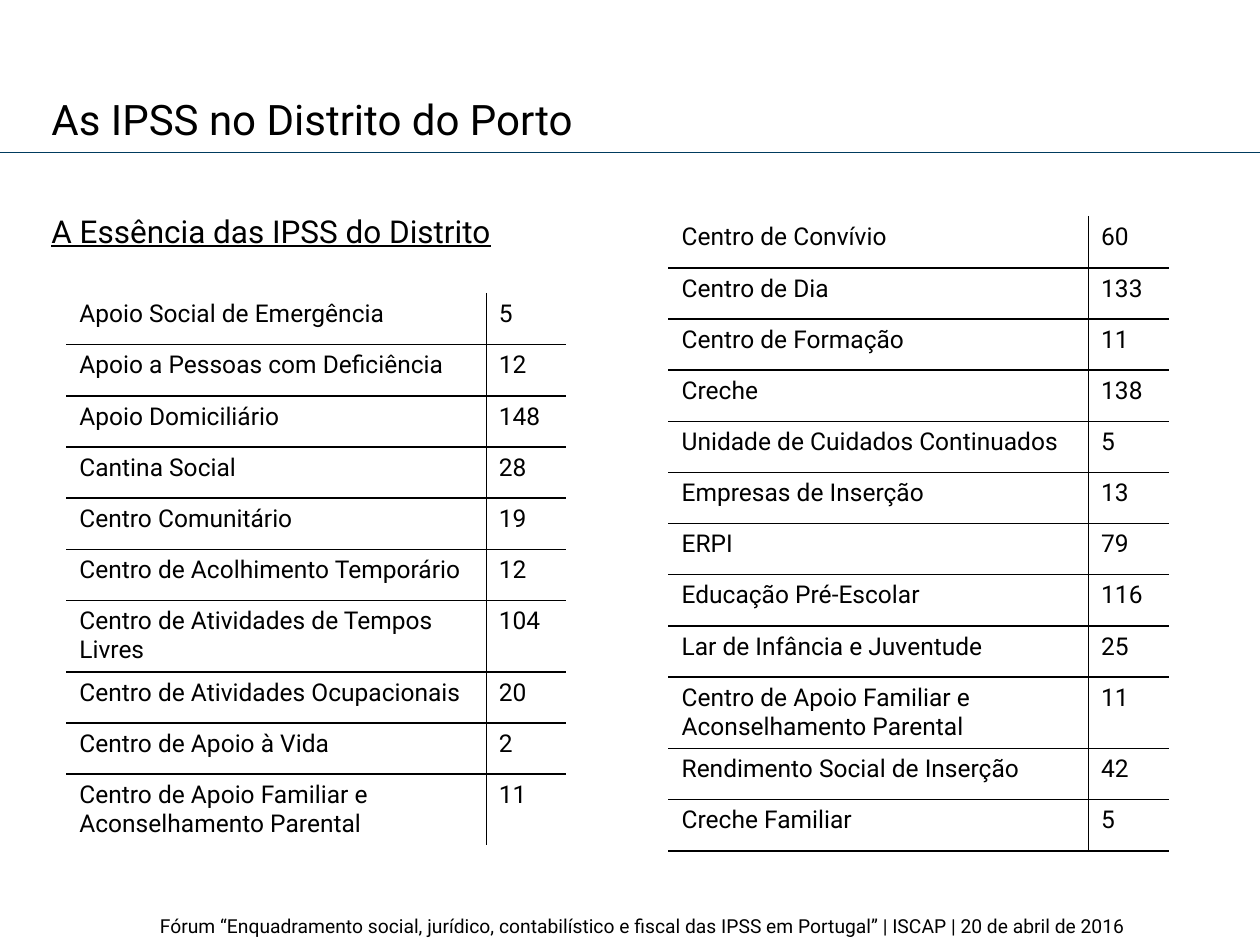
from lxml import etree
from pptx import Presentation
from pptx import util as u
from pptx.dml.color import RGBColor
from pptx.enum import shapes, text
from pptx.oxml.ns import qn

BLACK = RGBColor(0x00, 0x00, 0x00)
WHITE = RGBColor(0xFF, 0xFF, 0xFF)
NAVY = RGBColor(0x00, 0x3B, 0x5E)

LABEL_WIDTH, COUNT_WIDTH = u.Inches(3.33), u.Inches(0.63)
ROW_HEIGHT = u.Inches(13 / 32)

FIRST_RESPONSES = [
    ("Apoio Social de Emergência", 5),
    ("Apoio a Pessoas com Deficiência", 12),
    ("Apoio Domiciliário", 148),
    ("Cantina Social", 28),
    ("Centro Comunitário", 19),
    ("Centro de Acolhimento Temporário", 12),
    ("Centro de Atividades de Tempos Livres", 104),
    ("Centro de Atividades Ocupacionais", 20),
    ("Centro de Apoio à Vida", 2),
    ("Centro de Apoio Familiar e Aconselhamento Parental", 11),
]
OTHER_RESPONSES = [
    ("Centro de Convívio", 60),
    ("Centro de Dia", 133),
    ("Centro de Formação", 11),
    ("Creche", 138),
    ("Unidade de Cuidados Continuados", 5),
    ("Empresas de Inserção", 13),
    ("ERPI", 79),
    ("Educação Pré-Escolar", 116),
    ("Lar de Infância e Juventude", 25),
    ("Centro de Apoio Familiar e Aconselhamento Parental", 11),
    ("Rendimento Social de Inserção", 42),
    ("Creche Familiar", 5),
]


class SlideBuilder:
    """Holds the style and the slide being built."""

    font_name = "Roboto"
    table_size = 14
    border_width = u.Pt(1)

    def __init__(self, slide):
        self.slide = slide

    def style(self, paragraph, size, underline=None):
        font = paragraph.font
        font.name, font.size, font.underline = self.font_name, u.Pt(size), underline
        font.color.rgb = BLACK

    def text(self, wording, left, top, width, height, size, underline=None, wrap=True):
        box = self.slide.shapes.add_textbox(
            u.Inches(left), u.Inches(top), u.Inches(width), u.Inches(height))
        frame = box.text_frame
        frame.word_wrap = wrap
        frame.auto_size = text.MSO_AUTO_SIZE.SHAPE_TO_FIT_TEXT
        frame.text = wording
        self.style(frame.paragraphs[0], size, underline)

    def rule(self, top, width):
        line = self.slide.shapes.add_connector(
            shapes.MSO_CONNECTOR.STRAIGHT, 0, u.Inches(top), u.Inches(width), u.Inches(top))
        line.line.color.rgb = NAVY
        line.line.width = u.Pt(0.5)
        etree.SubElement(line._element.spPr, qn("a:effectLst"))

    def borders(self, cell, colors):
        """Set the left, right, top and bottom borders, in that order."""
        properties = cell._tc.get_or_add_tcPr()
        for position, (side, color) in enumerate(zip("LRTB", colors)):
            line = etree.Element(qn(f"a:ln{side}"), w=str(self.border_width))
            fill = etree.SubElement(line, qn("a:solidFill"))
            etree.SubElement(fill, qn("a:srgbClr"), val=str(color))
            properties.insert(position, line)

    def table(self, rows, left, top, closed):
        """Add a label and count table; closed draws a line under the last row."""
        table = self.slide.shapes.add_table(
            len(rows), 2, u.Inches(left), u.Inches(top),
            LABEL_WIDTH + COUNT_WIDTH, ROW_HEIGHT * len(rows)).table
        table.first_row = table.horz_banding = False
        table.columns[0].width, table.columns[1].width = LABEL_WIDTH, COUNT_WIDTH
        for r, row in enumerate(rows):
            above = BLACK if r else WHITE
            below = BLACK if closed or r < len(rows) - 1 else WHITE
            for c, value in enumerate(row):
                cell = table.cell(r, c)
                cell.text = str(value)
                self.style(cell.text_frame.paragraphs[0], self.table_size)
                cell.fill.solid()
                cell.fill.fore_color.rgb = WHITE
                sides = (BLACK, WHITE) if c else (WHITE, BLACK)
                self.borders(cell, (*sides, above, below))


def main():
    deck = Presentation()
    deck.slide_width, deck.slide_height = u.Inches(10), u.Inches(7.5)
    builder = SlideBuilder(deck.slides.add_slide(deck.slide_layouts[6]))

    # Footer
    builder.text("Fórum “Enquadramento social, jurídico, contabilístico e fiscal das IPSS "
                 "em Portugal” | ISCAP | 20 de abril de 2016", 1.17, 7.21, 9.62, 0.29, 11)

    # Heading
    builder.text("A Essência das IPSS do Distrito", 0.31, 1.63, 7.83, 0.4, 18, underline=True)
    builder.rule(1.21, 10)
    builder.text("As IPSS no Distrito do Porto", 0.31, 0.69, 4.39, 0.5, 24, wrap=False)

    # Social responses and their counts
    builder.table(FIRST_RESPONSES, 0.53, 2.33, closed=False)
    builder.table(OTHER_RESPONSES, 5.31, 1.72, closed=True)

    deck.save("out.pptx")


if __name__ == "__main__":
    main()
